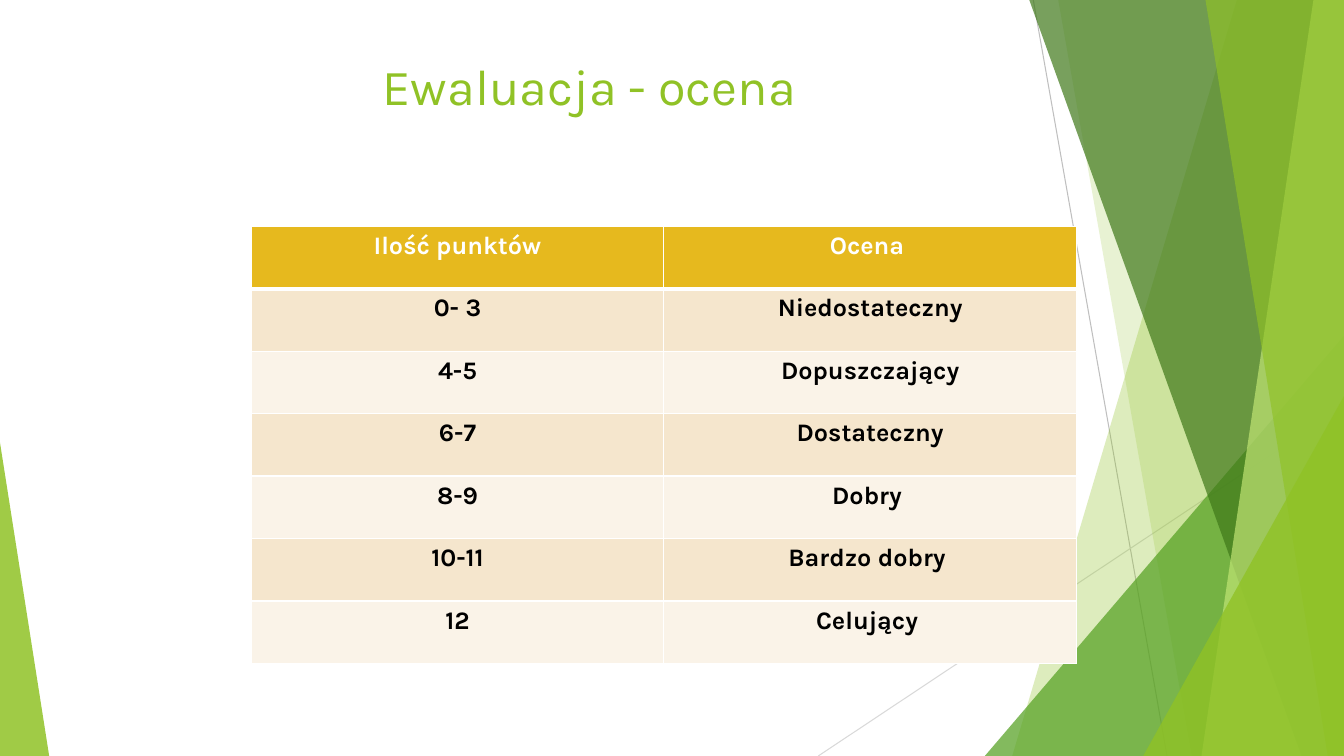
from dataclasses import dataclass

from lxml import etree
from pptx import Presentation
from pptx.dml.color import RGBColor
from pptx.enum.shapes import MSO_CONNECTOR, MSO_SHAPE
from pptx.enum.text import MSO_ANCHOR, PP_ALIGN
from pptx.oxml.ns import qn
from pptx.util import Cm, Pt

LINE = MSO_CONNECTOR.STRAIGHT
WEDGE = MSO_SHAPE.ISOSCELES_TRIANGLE
TOP = MSO_ANCHOR.TOP
CENTER = PP_ALIGN.CENTER


@dataclass(frozen=True)
class Theme:
    """Colours, font and type sizes of the slide."""
    font: str = "Karla"
    title: int = 36
    cell: int = 18
    lime: str = "90C226"
    green: str = "54A021"
    dark: str = "3F7819"
    pale: str = "C0E474"
    gray: str = "BFBFBF"
    light: str = "D9D9D9"
    gold: str = "E6B91E"
    sand: str = "F5E6CD"
    cream: str = "FAF3E8"
    white: str = "FFFFFF"
    black: str = "000000"


THEME = Theme()
GRADES = [
    ("Ilość punktów", "Ocena "),
    ("0- 3", "Niedostateczny"),
    ("4-5", "Dopuszczający"),
    ("6-7", "Dostateczny"),
    ("8-9", "Dobry "),
    ("10-11", "Bardzo dobry "),
    ("12", "Celujący "),
]


def write(frame, text, size=THEME.cell, color=THEME.black, bold=False):
    """Put centred text with its format into a text frame."""
    para = frame.paragraphs[0]
    para.alignment = CENTER
    run = para.add_run()
    run.text = text
    font = run.font
    font.name, font.size, font.bold = THEME.font, Pt(size), bold
    font.color.rgb = RGBColor.from_string(color)


def paint(shape, color, alpha):
    """Give a shape a plain fill of the given opacity in percent."""
    shape.shadow.inherit = False
    shape.line.fill.background()
    shape.fill.solid()
    shape.fill.fore_color.rgb = RGBColor.from_string(color)
    tone = shape.element.spPr.find(qn("a:solidFill"))[0]
    etree.SubElement(tone, qn("a:alpha"), val=str(alpha * 1000))


def add_line(slide, start, end, color):
    """Draw a thin line between two points."""
    line = slide.shapes.add_connector(LINE, *start, *end)
    line.line.color.rgb = RGBColor.from_string(color)
    line.line.width = Pt(0.75)
    etree.SubElement(line.element.spPr, qn("a:effectLst"))


def add_band(slide, box, upper, lower, color, alpha):
    """Fill from a slanted edge, set by two insets, to the right of the box."""
    left, top, width, height = box
    right, base = left + width, top + height
    form = slide.shapes.build_freeform(right - Cm(upper), top)
    form.add_line_segments(
        [(right, top), (right, base), (right - Cm(lower), base)])
    paint(form.convert_to_shape(), color, alpha)


def add_wedge(slide, box, width, height, color, alpha, apex):
    """Stand a right triangle in a lower corner: apex 0 left, 1 right."""
    left, top, span, depth = box
    wide, high = Cm(width), Cm(height)
    wedge = slide.shapes.add_shape(
        WEDGE, left + apex * (span - wide), top + depth - high, wide, high)
    wedge.adjustments[0] = apex
    paint(wedge, color, alpha)


def add_decor(slide, box):
    """Draw the green facets and thin lines at the sides of the box."""
    left, top, width, height = box
    right, base = left + width, top + height
    add_line(slide, (right - Cm(7.83), top), (right - Cm(4.46), base),
             THEME.gray)
    add_line(slide, (right, top + Cm(10.24)), (right - Cm(13.25), base),
             THEME.light)
    add_band(slide, box, 2.7, 8.36, THEME.lime, 30)
    add_band(slide, box, 7.2, 3.84, THEME.lime, 20)
    add_wedge(slide, box, 9.05, 10.59, THEME.green, 72, 1)
    add_band(slide, box, 7.93, 1.07, THEME.dark, 70)
    add_band(slide, box, 0.77, 3.59, THEME.pale, 70)
    add_band(slide, box, 3.49, 0.41, THEME.lime, 65)
    add_wedge(slide, box, 5.06, 9.07, THEME.lime, 80, 1)
    add_wedge(slide, box, 1.24, 7.9, THEME.lime, 85, 0)


def add_title(slide, box, text):
    """Place the title in front of the decoration."""
    title = slide.shapes.title
    title.left, title.top, title.width, title.height = box
    slide.shapes.element.append(title.element)
    frame = title.text_frame
    frame.word_wrap = True
    frame.vertical_anchor = TOP
    write(frame, text, size=THEME.title, color=THEME.lime)


def add_edges(cell, upper, lower):
    """Rule a cell in white, with its own upper and lower widths."""
    props = cell._tc.get_or_add_tcPr()
    for side, width in zip("LRTB", (1, 1, upper, lower)):
        edge = etree.SubElement(props, qn("a:ln" + side), w=str(Pt(width)))
        fill = etree.SubElement(edge, qn("a:solidFill"))
        etree.SubElement(fill, qn("a:srgbClr"), val=THEME.white)


def add_grades(slide, box, rows):
    """Fill the box with the table of points and grades."""
    table = slide.shapes.add_table(len(rows), len(rows[0]), *box).table
    for row, texts in enumerate(rows):
        head = row == 0
        fill = THEME.gold if head else (THEME.cream, THEME.sand)[row % 2]
        for col, text in enumerate(texts):
            cell = table.cell(row, col)
            add_edges(cell, 3 if row == 1 else 1, 3 if head else 1)
            cell.fill.solid()
            cell.fill.fore_color.rgb = RGBColor.from_string(fill)
            cell.vertical_anchor = TOP
            write(cell.text_frame, text, bold=True,
                  color=THEME.white if head else THEME.black)


def main():
    """Build the slide and save it."""
    deck = Presentation()
    deck.slide_width, deck.slide_height = Cm(33.87), Cm(19.05)
    slide = deck.slides.add_slide(deck.slide_layouts[5])
    add_decor(slide, (0, 0, deck.slide_width, deck.slide_height))
    add_title(slide, (Cm(1.8), Cm(1.27), Cm(26.11), Cm(2.67)),
              "Ewaluacja - ocena")
    add_grades(slide, (Cm(6.33), Cm(5.7), Cm(20.8), Cm(11.02)), GRADES)
    deck.save("out.pptx")


if __name__ == "__main__":
    main()
